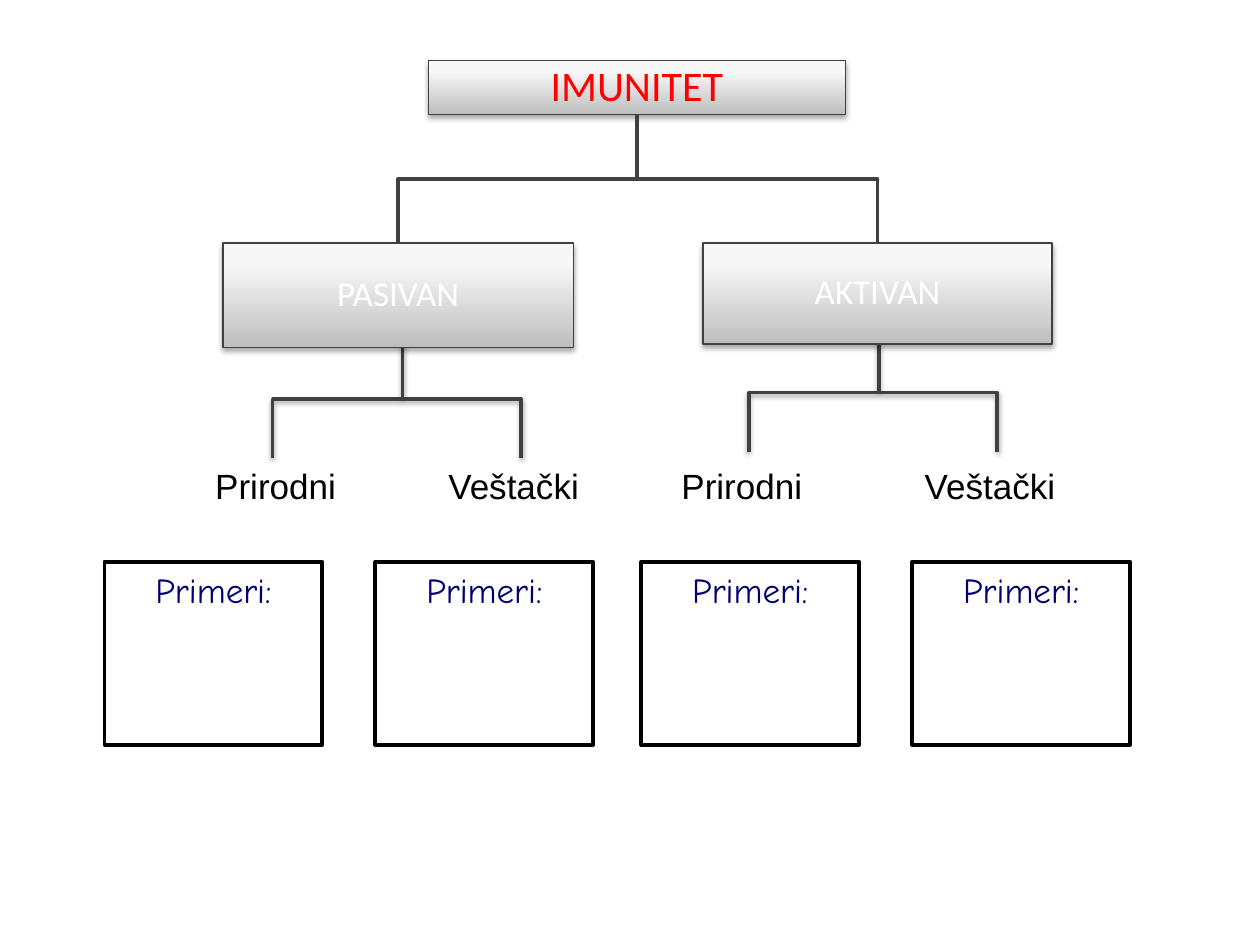
"""Build a chart of the kinds of immunity with room for examples."""
from copy import deepcopy
from typing import NamedTuple

from lxml.etree import SubElement
from pptx import Presentation
from pptx.dml.color import RGBColor
from pptx.enum.shapes import MSO_SHAPE as Kind
from pptx.enum.text import MSO_ANCHOR as Anchor, MSO_AUTO_SIZE as Fit, PP_ALIGN as Align
from pptx.oxml.ns import qn
from pptx.util import Inches, Pt

COLS, ROWS = 100, 75
WIDE, HIGH = Inches(10), Inches(7.5)

RED = RGBColor(0xFF, 0x00, 0x00)
WHITE = RGBColor(0xFF, 0xFF, 0xFF)
BLACK = RGBColor(0x00, 0x00, 0x00)
NAVY = RGBColor(0x00, 0x00, 0x72)
DARK = RGBColor(0x40, 0x40, 0x40)
STOPS = (
    (0, RGBColor(0xBE, 0xBE, 0xBE)),
    (0.8, RGBColor(0xF7, 0xF7, 0xF7)),
    (1, RGBColor(0xF8, 0xF8, 0xF8)),
)


class Area(NamedTuple):
    """A place on the grid, in columns and rows."""
    col: float
    row: float
    wide: float
    high: float

    @property
    def mid(self) -> float:
        """Return the middle column."""
        return self.col + self.wide / 2

    @property
    def end(self) -> float:
        """Return the bottom row."""
        return self.row + self.high


class Branch(NamedTuple):
    """A kind of immunity with its box and its brace."""
    text: str
    box: Area
    brace: Area


class Leaf(NamedTuple):
    """A label and the left columns of its text and its example box."""
    text: str
    label: float
    wide: float
    box: float


ROOT = Area(34, 4.8, 33.1, 4.3)
TREE = (
    Branch("PASIVAN", Area(17.7, 19.3, 27.8, 8.3), Area(26.8, 21.8, 9.4, 19.7)),
    Branch("AKTIVAN", Area(55.8, 19.3, 27.7, 8), Area(64.6, 21.3, 9.4, 19.7)),
)
LEAVES = (
    Leaf("Prirodni", 16.1, 11.7, 8.3),
    Leaf("Veštački", 34.6, 12.5, 29.8),
    Leaf("Prirodni", 53.1, 11.7, 50.9),
    Leaf("Veštački", 72.4, 12.5, 72.4),
)


def spot(col: float, row: float) -> tuple[int, int]:
    """Turn a column and a row into slide lengths."""
    return round(WIDE * col / COLS), round(HIGH * row / ROWS)


def frame(area: Area) -> tuple[int, int, int, int]:
    """Turn an area into left, top, width and height."""
    return *spot(area.col, area.row), *spot(area.wide, area.high)


def write(shape, text: str, size: float, face: str, ink: RGBColor, align=Align.CENTER) -> None:
    """Set one line of text and its format."""
    shape.text_frame.text = text
    para = shape.text_frame.paragraphs[0]
    para.alignment = align
    font = para.runs[0].font
    font.size, font.name = Pt(size), face
    font.color.rgb = ink


def edge(shape, ink: RGBColor, width: float) -> None:
    """Set the outline."""
    shape.line.color.rgb = ink
    shape.line.width = Pt(width)


def shade(shape, alpha: int, gap: float) -> None:
    """Cast a soft shadow downward."""
    shape.shadow.inherit = False
    cast = SubElement(
        shape._element.spPr.find(qn("a:effectLst")), qn("a:outerShdw"),
        blurRad=str(Pt(3.1)), dist=str(Pt(gap)), dir="5400000", rotWithShape="0")
    tone = SubElement(cast, qn("a:srgbClr"), val=str(BLACK))
    SubElement(tone, qn("a:alpha"), val=str(alpha * 1000))


def panel(shape, text: str, size: float, ink: RGBColor, inset: float) -> None:
    """Format a grey panel with centred text."""
    shape.fill.gradient()
    shape.fill.gradient_angle = 90
    first = shape._element.spPr.find(".//" + qn("a:gs"))
    first.getparent().append(deepcopy(first))
    for stop, (place, tone) in zip(shape.fill.gradient_stops, STOPS):
        stop.position, stop.color.rgb = place, tone
    edge(shape, DARK, 0.75)
    shade(shape, 35, 1.8)
    write(shape, text, size, "Calibri", ink)
    body = shape.text_frame
    body.word_wrap, body.auto_size = True, Fit.NONE
    body.vertical_anchor = Anchor.MIDDLE
    body.margin_left = body.margin_right = body.margin_top = body.margin_bottom = Inches(inset)
    body.paragraphs[0].line_spacing = 0.9


def link(shapes, top: Area, low: Area) -> None:
    """Draw a stepped line from one panel down to another."""
    half = (top.end + low.row) / 2
    pen = shapes.build_freeform(*spot(top.mid, top.end))
    steps = ((top.mid, half), (low.mid, half), (low.mid, low.row))
    pen.add_line_segments([spot(*step) for step in steps], close=False)
    path = pen.convert_to_shape()
    path.fill.background()
    edge(path, DARK, 2)
    path.shadow.inherit = False


def fork(shapes, area: Area) -> None:
    """Draw a square brace that opens downward."""
    brace = shapes.add_shape(Kind.RIGHT_BRACE, *frame(area))
    brace.rotation = 270
    brace.adjustments[0], brace.adjustments[1] = 0, 0.523
    brace.fill.background()
    edge(brace, DARK, 2)
    shade(brace, 38, 1.6)


def sprout(shapes, leaf: Leaf) -> None:
    """Draw a label and its box for examples."""
    label = shapes.add_textbox(*frame(Area(leaf.label, 36.4, leaf.wide, 4.4)))
    write(label, leaf.text, 20, "Arial", BLACK, Align.LEFT)
    label.text_frame.word_wrap = False
    label.text_frame.auto_size = Fit.SHAPE_TO_FIT_TEXT
    box = shapes.add_shape(Kind.RECTANGLE, *frame(Area(leaf.box, 44.6, 17.3, 14.5)))
    box.fill.solid()
    box.fill.fore_color.rgb = WHITE
    edge(box, BLACK, 2.25)
    box.shadow.inherit = False
    write(box, "Primeri:", 20, "Comic Neue", NAVY)
    box.text_frame.vertical_anchor = Anchor.TOP


def main() -> None:
    """Build and save the slide."""
    deck = Presentation()
    deck.slide_width, deck.slide_height = WIDE, HIGH
    shapes = deck.slides.add_slide(deck.slide_layouts[5]).shapes
    title = shapes.title
    title.left, title.top, title.width, title.height = frame(ROOT)
    panel(title, "IMUNITET", 24, RED, 0.02)
    for branch in TREE:
        fork(shapes, branch.brace)
        link(shapes, ROOT, branch.box)
        box = shapes.add_shape(Kind.RECTANGLE, *frame(branch.box))
        panel(box, branch.text, 20, WHITE, 0.01)
    for leaf in LEAVES:
        sprout(shapes, leaf)
    deck.save("out.pptx")


if __name__ == "__main__":
    main()
